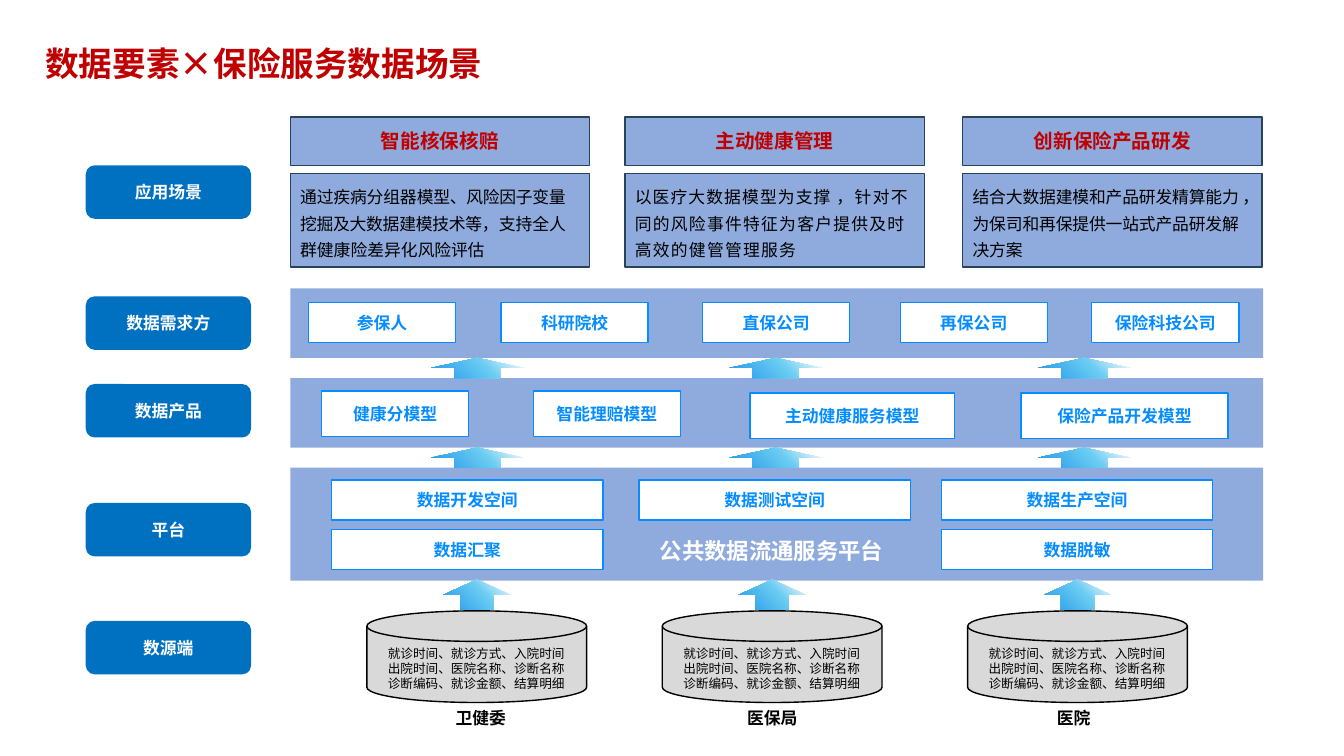
from dataclasses import dataclass

from lxml.etree import SubElement
from pptx import Presentation
from pptx.dml.color import RGBColor
from pptx.enum.shapes import MSO_SHAPE
from pptx.enum.text import MSO_ANCHOR, MSO_AUTO_SIZE, PP_ALIGN
from pptx.oxml.ns import qn
from pptx.util import Inches, Pt

FONT = "Noto Sans CJK SC"
WHITE, BLACK, RED = "FFFFFF", "000000", "C00000"
LABEL_BLUE, BAND_BLUE, CHIP_BLUE = "0070C0", "8FAADC", "058CFF"
CARD_EDGE, DISK_GREY = "28445D", "D9D9D9"
ARROW_STOPS = [(0, WHITE), (42, "6ACCF2"), (100, "2497EA")]

# The slide is a grid of 100 columns by 100 rows.
SLIDE_WIDTH, SLIDE_HEIGHT = Inches(13.33), Inches(7.5)
COLUMN, ROW = SLIDE_WIDTH / 100, SLIDE_HEIGHT / 100

LABEL_TOPS = {"应用场景": 21.87, "数据需求方": 39.2, "数据产品": 50.8,
              "平台": 66.53, "数源端": 82.13}
BAND_LEFT, BAND_WIDTH = 21.6, 72.38

# Card text is split into runs of (text, character spacing in points).
CARDS = [
    (21.6, "智能核保核赔", [("通过疾病分组器", -0.1),
                     ("模型、风险因子变量挖掘及大数据建模技术等，", -0.2),
                     ("支持全人群健康险差异化", 0), ("风险评估", -0.1)]),
    (46.5, "主动健康管理", [("以医疗大数据模型为支撑 ，", 0.8),
                     ("针对不同的风险事件特征为客户提供及时高效的健管管理服务", 0.9)]),
    (71.63, "创新保险产品研发",
     [("结合大数据建模和产品研发精算能力 ，为保司和再保提供一站式产品研发解决方案", -0.1)]),
]

# Chips are (text, left, top, width, height) inside their band.
CONSUMERS = [(text, left, 1.87, 10.95, 5.33) for text, left in
             [("参保人", 1.35), ("科研院校", 15.68), ("直保公司", 30.68),
              ("再保公司", 45.38), ("保险科技公司", 59.63)]]
PRODUCTS = [("健康分模型", 2.33, 1.73, 10.95, 6), ("智能理赔模型", 18.08, 1.73, 10.95, 6),
            ("主动健康服务模型", 34.2, 2, 15.23, 6), ("保险产品开发模型", 54.38, 2, 15.38, 6)]
SPACES = [(text, left, top, 20.18, 5.33) for text, left, top in
          [("数据开发空间", 3.08, 1.6), ("数据测试空间", 25.95, 1.6),
           ("数据生产空间", 48.45, 1.6), ("数据汇聚", 3.08, 8.13),
           ("数据脱敏", 48.45, 8.13)]]

FLOW_LEFTS, FLOW_TOPS = [32.1, 54.3, 77.25], [47.33, 59.2]
SOURCES = [("卫健委", 27.3, 3.38), ("医保局", 49.28, 3.08), ("医院", 72, 2.78)]
RECORD_FIELDS = ["就诊时间、就诊方式、入院时间", "出院时间、医院名称、诊断名称",
                 "诊断编码、就诊金额、结算明细"]


@dataclass
class Box:
    left: float
    top: float
    width: float
    height: float

    def inner(self, left, top, width, height):
        """Return a box placed relative to this one's top left corner."""
        return Box(self.left + left, self.top + top, width, height)

    def lengths(self):
        return (round(self.left * COLUMN), round(self.top * ROW),
                round(self.width * COLUMN), round(self.height * ROW))


def color(value):
    return RGBColor.from_string(value)


def format_run(run, size, fill, bold=False, spacing=0):
    run.font.size = Pt(size)
    run.font.bold = bold
    run.font.name = FONT
    run.font.color.rgb = color(fill)
    properties = run._r.get_or_add_rPr()
    SubElement(properties, qn("a:ea")).set("typeface", FONT)
    if spacing:
        properties.set("spc", str(round(spacing * 100)))


def write(text_frame, text, size, fill, bold=True, align=PP_ALIGN.CENTER):
    text_frame.word_wrap = True
    text_frame.text = text
    for paragraph in text_frame.paragraphs:
        paragraph.alignment = align
        for run in paragraph.runs:
            format_run(run, size, fill, bold)


def add_block(slide, box, fill=None, edge=None, kind=MSO_SHAPE.RECTANGLE):
    shape = slide.shapes.add_shape(kind, *box.lengths())
    shape.shadow.inherit = False
    if fill:
        shape.fill.solid()
        shape.fill.fore_color.rgb = color(fill)
    if edge:
        shape.line.color.rgb = color(edge)
        shape.line.width = Pt(1)
    else:
        shape.line.fill.background()
    shape.text_frame.vertical_anchor = MSO_ANCHOR.MIDDLE
    return shape


def add_text(slide, box, text, size, **style):
    text_box = slide.shapes.add_textbox(*box.lengths())
    write(text_box.text_frame, text, size, BLACK, **style)
    return text_box


def add_arrow(slide, box):
    """Draw an up arrow that fades from its lower left to its upper right."""
    arrow = add_block(slide, box, kind=MSO_SHAPE.UP_ARROW)
    arrow.fill.gradient()
    arrow.fill.gradient_angle = 225
    stops = arrow._element.spPr.find(".//" + qn("a:gsLst"))
    for stop in list(stops):
        stops.remove(stop)
    for position, value in ARROW_STOPS:
        stop = SubElement(stops, qn("a:gs"), pos=str(position * 1000))
        SubElement(stop, qn("a:srgbClr"), val=value)


def add_title(slide, box):
    title = slide.shapes.title
    title.left, title.top, title.width, title.height = box.lengths()
    write(title.text_frame, "数据要素×保险服务数据场景", 24, RED, align=PP_ALIGN.LEFT)
    title.text_frame.auto_size = MSO_AUTO_SIZE.NONE
    title.text_frame.vertical_anchor = MSO_ANCHOR.MIDDLE
    title.text_frame.paragraphs[0].line_spacing = 0.9


def add_layer_label(slide, box, text):
    label = add_block(slide, box, LABEL_BLUE, kind=MSO_SHAPE.ROUNDED_RECTANGLE)
    write(label.text_frame, text, 12, WHITE)


def add_card(slide, box, heading, runs):
    header = add_block(slide, box.inner(0, 0, box.width, 6.4), BAND_BLUE, CARD_EDGE)
    write(header.text_frame, heading, 14, RED)
    body = add_block(slide, box.inner(0, 7.47, box.width, 12.4), BAND_BLUE, CARD_EDGE)
    body.text_frame.word_wrap = True
    paragraph = body.text_frame.paragraphs[0]
    paragraph.alignment = PP_ALIGN.LEFT
    paragraph.line_spacing = Pt(19)
    for text, spacing in runs:
        run = paragraph.add_run()
        run.text = text
        format_run(run, 12, BLACK, spacing=spacing)


def add_band(slide, box, chips, caption=None):
    add_block(slide, box, BAND_BLUE)
    if caption:
        platform = add_block(slide, box.inner(17.18, 8.53, 37.28, 4.93), BAND_BLUE)
        write(platform.text_frame, caption, 16, WHITE)
    for text, *place in chips:
        chip = add_block(slide, box.inner(*place), WHITE, CHIP_BLUE)
        write(chip.text_frame, text, 12, CHIP_BLUE)


def add_source(slide, box, name, name_left):
    """Draw a data store with its record fields, its name and its arrow up."""
    add_block(slide, box, DISK_GREY, BLACK, MSO_SHAPE.FLOWCHART_MAGNETIC_DISK)
    add_arrow(slide, box.inner(5.7, -4.13, 4.95, 4))
    fields = add_text(slide, box.inner(0.82, 4, 14.7, 6.93), "\n".join(RECORD_FIELDS),
                      9, bold=False, align=PP_ALIGN.LEFT)
    for paragraph in fields.text_frame.paragraphs:
        paragraph.line_spacing = Pt(10.8)
    add_text(slide, box.inner(name_left, box.height, 10.2, 4), name, 12)


def main():
    presentation = Presentation()
    presentation.slide_width, presentation.slide_height = SLIDE_WIDTH, SLIDE_HEIGHT
    slide = presentation.slides.add_slide(presentation.slide_layouts[5])
    add_title(slide, Box(2.63, 2.93, 88.6, 11.6))
    for text, top in LABEL_TOPS.items():
        add_layer_label(slide, Box(6.38, top, 12.3, 7.07), text)
    for left, heading, runs in CARDS:
        add_card(slide, Box(left, 15.47, 22.28, 19.87), heading, runs)
    add_band(slide, Box(BAND_LEFT, 38.13, BAND_WIDTH, 9.2), CONSUMERS)
    add_band(slide, Box(BAND_LEFT, 50, BAND_WIDTH, 9.2), PRODUCTS)
    add_band(slide, Box(BAND_LEFT, 61.87, BAND_WIDTH, 14.93), SPACES, "公共数据流通服务平台")
    for top in FLOW_TOPS:
        for left in FLOW_LEFTS:
            add_arrow(slide, Box(left, top, 6.83, 2.67))
    for name, left, name_left in SOURCES:
        add_source(slide, Box(left, 80.8, 16.35, 12.13), name, name_left)
    presentation.save("out.pptx")


if __name__ == "__main__":
    main()
